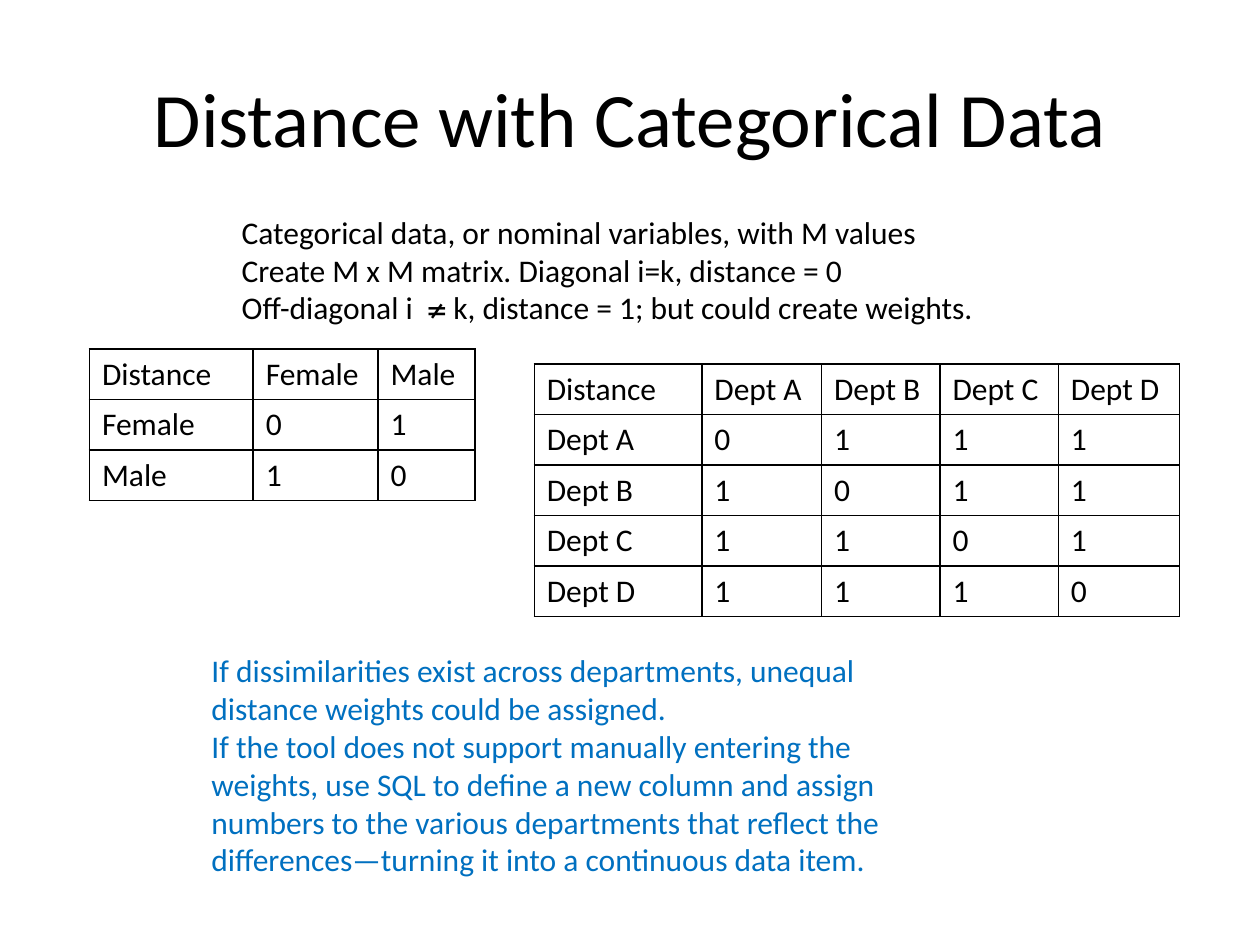
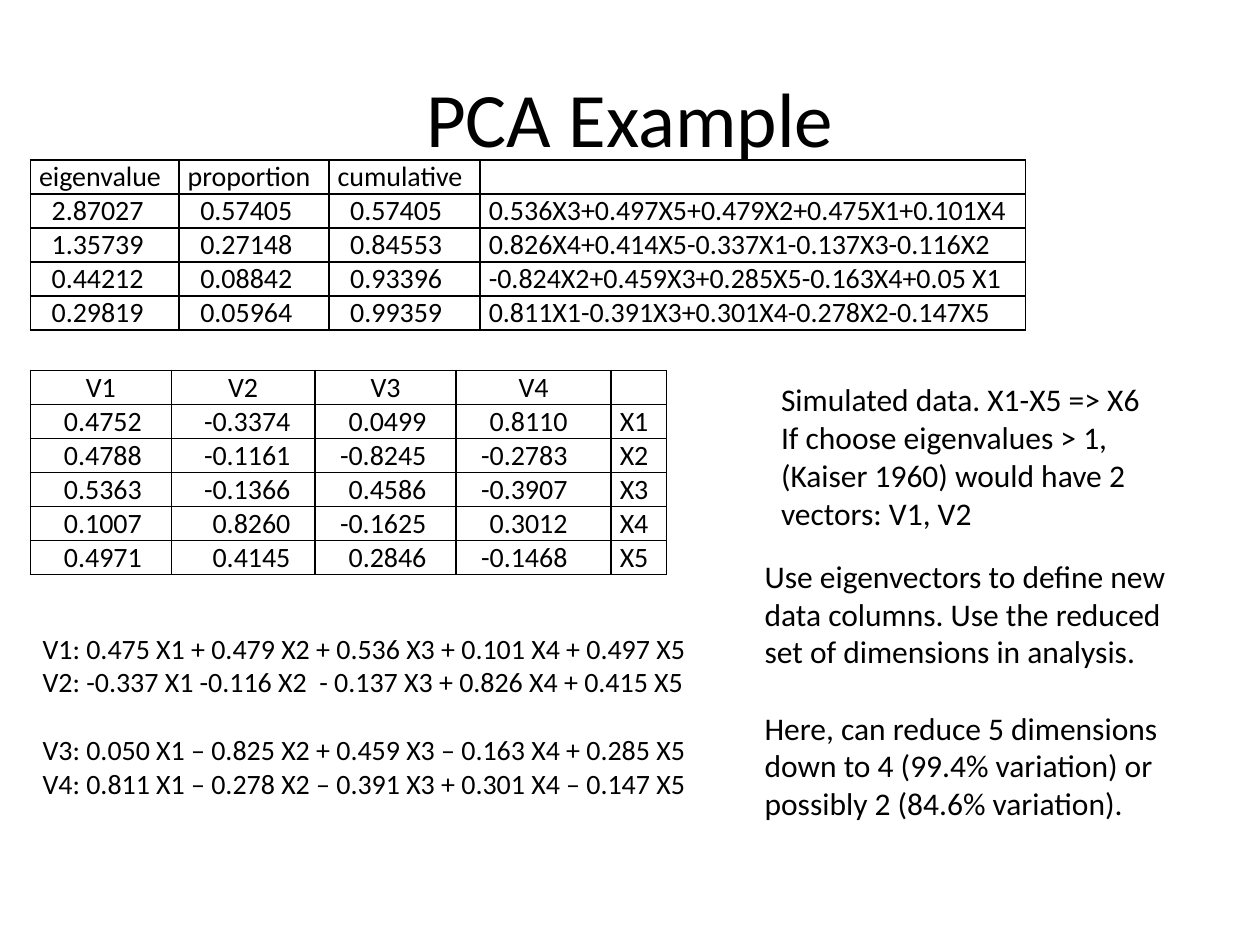
from dataclasses import dataclass

from lxml.etree import SubElement
from pptx import Presentation
from pptx.dml.color import RGBColor
from pptx.enum.text import MSO_ANCHOR, PP_ALIGN
from pptx.oxml.ns import qn
from pptx.slide import Slide
from pptx.text.text import _Paragraph as Paragraph
from pptx.util import Inches, Length, Pt

BLACK = RGBColor(0x00, 0x00, 0x00)
WHITE = RGBColor(0xFF, 0xFF, 0xFF)
BLUE = RGBColor(0x00, 0x70, 0xC0)
FONT = "Calibri"
SYMBOL_FONT = "TeX Gyre Schola"
LINE_SPACING = 1.22


@dataclass(frozen=True)
class TextBlock:
    left: float
    top: float
    width: float
    height: float
    lines: tuple[str, ...]
    size: int = 18
    color: RGBColor = BLACK
    wrap: bool = True
    gap_before: int | None = None


@dataclass(frozen=True)
class Column:
    width: float
    indent: float = 0
    decimal_tab: float = 0


@dataclass(frozen=True)
class Grid:
    left: float
    top: float
    columns: tuple[Column, ...]
    rows: list[list[str]]
    size: int = 18
    row_height: float = 0.4
    margin_x: float = 0.1
    margin_y: float = 0.05
    header_align: PP_ALIGN = PP_ALIGN.LEFT


def style_runs(p: Paragraph, size: int, color: RGBColor = BLACK) -> None:
    for r in p.runs:
        r.font.name = FONT
        r.font.size = Pt(size)
        r.font.color.rgb = color


def add_title(s: Slide, title: str) -> None:
    tf = s.shapes.add_textbox(Inches(0.5), Inches(0.3), Inches(9), Inches(1.25)).text_frame
    tf.word_wrap = True
    tf.vertical_anchor = MSO_ANCHOR.MIDDLE
    tf.text = title
    p = tf.paragraphs[0]
    p.alignment = PP_ALIGN.CENTER
    style_runs(p, 44)


def add_text(s: Slide, block: TextBlock) -> None:
    box = (block.left, block.top, block.width, block.height)
    tf = s.shapes.add_textbox(*map(Inches, box)).text_frame
    tf.word_wrap = block.wrap
    tf.text = "\n".join(block.lines)
    for i, p in enumerate(tf.paragraphs):
        if i == block.gap_before:
            p.space_before = Pt(block.size * LINE_SPACING)
        if "≠" in p.text:
            before, after = p.text.split("≠")
            p.text = before
            symbol = p.add_run()
            symbol.text = "≠"
            p.add_run().text = after
            style_runs(p, block.size, block.color)
            symbol.font.name = SYMBOL_FONT
        else:
            style_runs(p, block.size, block.color)


def set_indent(p: Paragraph, column: Column) -> None:
    pPr = p._p.get_or_add_pPr()
    if column.indent:
        pPr.set("marL", str(Inches(column.indent)))
        pPr.set("indent", "0")
    if column.decimal_tab:
        tabs = SubElement(pPr, qn("a:tabLst"))
        SubElement(tabs, qn("a:tab"), pos=str(Inches(column.decimal_tab)), algn="dec")


def set_borders(cell, width: Length = Pt(1)) -> None:
    tcPr = cell._tc.get_or_add_tcPr()
    for side in ("lnL", "lnR", "lnT", "lnB"):
        line = SubElement(tcPr, qn(f"a:{side}"), w=str(width))
        fill = SubElement(line, qn("a:solidFill"))
        SubElement(fill, qn("a:srgbClr"), val=str(BLACK))


def add_grid(s: Slide, grid: Grid) -> None:
    width = sum(c.width for c in grid.columns)
    height = grid.row_height * len(grid.rows)
    table = s.shapes.add_table(
        len(grid.rows), len(grid.columns),
        Inches(grid.left), Inches(grid.top), Inches(width), Inches(height),
    ).table
    table.first_row = table.horz_banding = False
    for table_column, column in zip(table.columns, grid.columns):
        table_column.width = Inches(column.width)
    for i, row in enumerate(grid.rows):
        table.rows[i].height = Inches(grid.row_height)
        for j, (value, column) in enumerate(zip(row, grid.columns)):
            cell = table.cell(i, j)
            cell.margin_left = cell.margin_right = Inches(grid.margin_x)
            cell.margin_top = cell.margin_bottom = Inches(grid.margin_y)
            set_borders(cell)
            cell.fill.solid()
            cell.fill.fore_color.rgb = WHITE
            p = cell.text_frame.paragraphs[0]
            if i == 0:
                p.alignment = grid.header_align
            else:
                set_indent(p, column)
                if column.decimal_tab:
                    value = "\t" + value
            if value:
                p.text = value
                style_runs(p, grid.size)
            else:
                SubElement(p._p, qn("a:endParaRPr"), sz=str(grid.size * 100))


def distance_rows(labels: list[str]) -> list[list[str]]:
    header = ["Distance", *labels]
    return [header] + [[a, *("0" if a == b else "1" for b in labels)] for a in labels]


def add_compact_grid(s: Slide, top: float, columns: tuple[Column, ...],
                     rows: list[list[str]], header_align: PP_ALIGN) -> None:
    add_grid(s, Grid(0.24, top, columns, rows, 16, 0.27, 0.07, 0, header_align))


def build_distance_slide(s: Slide) -> None:
    add_title(s, "Distance with Categorical Data")
    add_text(s, TextBlock(1.82, 1.64, 6.06, 1.01, (
        "Categorical data, or nominal variables, with M values",
        "Create M x M matrix. Diagonal i=k, distance = 0",
        "Off-diagonal i  ≠ k, distance = 1; but could create weights.",
    ), wrap=False))
    genders = tuple(map(Column, (1.3, 0.99, 0.77)))
    add_grid(s, Grid(0.71, 2.77, genders, distance_rows(["Female", "Male"])))
    departments = tuple(map(Column, (1.33, 0.95, 0.94, 0.94, 0.96)))
    add_grid(s, Grid(4.24, 2.89, departments, distance_rows([f"Dept {d}" for d in "ABCD"])))
    add_text(s, TextBlock(1.58, 5.12, 5.95, 1.92, (
        "If dissimilarities exist across departments, unequal distance weights could be assigned.",
        "If the tool does not support manually entering the weights, use SQL to define a new column "
        "and assign numbers to the various departments that reflect the differences—turning it into "
        "a continuous data item.",
    ), color=BLUE))


def build_pca_slide(s: Slide) -> None:
    add_title(s, "PCA Example")
    eigenvalue_columns = (Column(1.18, 0.1), Column(1.19, 0.1), Column(1.2, 0.1), Column(4.33))
    add_compact_grid(s, 1.27, eigenvalue_columns, [
        ["eigenvalue", "proportion", "cumulative", ""],
        ["2.87027", "0.57405", "0.57405", "0.536X3+0.497X5+0.479X2+0.475X1+0.101X4"],
        ["1.35739", "0.27148", "0.84553", "0.826X4+0.414X5-0.337X1-0.137X3-0.116X2"],
        ["0.44212", "0.08842", "0.93396", "-0.824X2+0.459X3+0.285X5-0.163X4+0.05 X1"],
        ["0.29819", "0.05964", "0.99359", "0.811X1-0.391X3+0.301X4-0.278X2-0.147X5"],
    ], PP_ALIGN.LEFT)
    vector_columns = (
        Column(1.12, decimal_tab=0.31), Column(1.14, decimal_tab=0.37),
        Column(1.12, decimal_tab=0.31), Column(1.23, decimal_tab=0.31), Column(0.44),
    )
    add_compact_grid(s, 2.94, vector_columns, [
        ["V1", "V2", "V3", "V4", ""],
        ["0.4752", "-0.3374", "0.0499", "0.8110", "X1"],
        ["0.4788", "-0.1161", "-0.8245", "-0.2783", "X2"],
        ["0.5363", "-0.1366", "0.4586", "-0.3907", "X3"],
        ["0.1007", "0.8260", "-0.1625", "0.3012", "X4"],
        ["0.4971", "0.4145", "0.2846", "-0.1468", "X5"],
    ], PP_ALIGN.CENTER)
    blocks = (
        TextBlock(6.1, 2.97, 3.18, 1.31, (
            "Simulated data. X1-X5 => X6",
            "If choose eigenvalues > 1, (Kaiser 1960) would have 2 vectors: V1, V2",
        )),
        TextBlock(0.24, 4.96, 5.37, 1.45, (
            "V1: 0.475 X1 + 0.479 X2 + 0.536 X3 + 0.101 X4 + 0.497 X5",
            "V2: -0.337 X1 -0.116 X2  - 0.137 X3 + 0.826 X4 + 0.415 X5",
            "V3: 0.050 X1 – 0.825 X2 + 0.459 X3 – 0.163 X4 + 0.285 X5",
            "V4: 0.811 X1 – 0.278 X2 – 0.391 X3 + 0.301 X4 – 0.147 X5",
        ), size=16, wrap=False, gap_before=2),
        TextBlock(5.97, 4.37, 3.51, 2.22, (
            "Use eigenvectors to define new data columns. Use the reduced set of dimensions in analysis.",
            "Here, can reduce 5 dimensions down to 4 (99.4% variation) or possibly 2 (84.6% variation).",
        ), gap_before=1),
    )
    for block in blocks:
        add_text(s, block)


def main() -> None:
    prs = Presentation()
    prs.slide_width, prs.slide_height = Inches(10), Inches(7.5)
    blank = prs.slide_layouts[6]
    for build in (build_distance_slide, build_pca_slide):
        build(prs.slides.add_slide(blank))
    prs.save("out.pptx")


if __name__ == "__main__":
    main()
